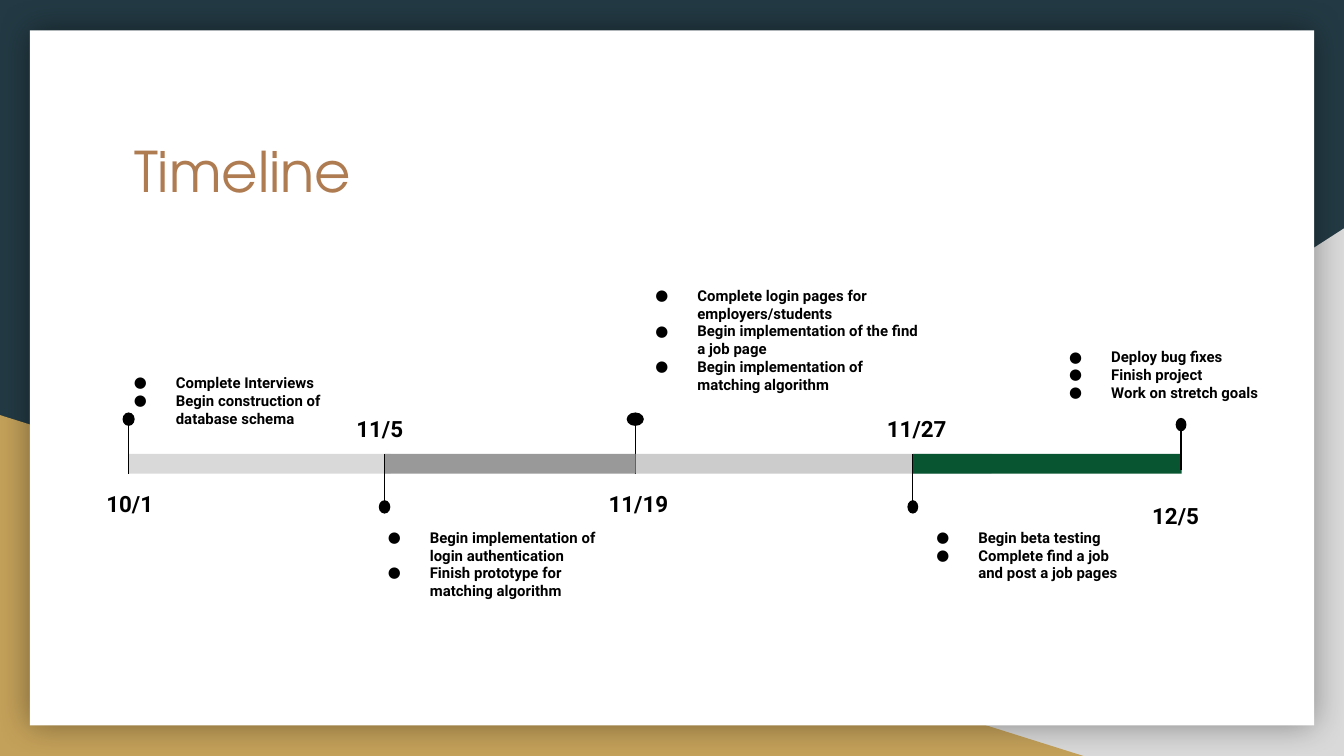
"""Build a project timeline slide with dated milestones and their tasks."""

from dataclasses import dataclass
from typing import NamedTuple, Optional

from lxml import etree
from pptx import Presentation
from pptx.dml.color import RGBColor
from pptx.enum.shapes import MSO_CONNECTOR, MSO_SHAPE
from pptx.enum.text import MSO_ANCHOR, PP_ALIGN
from pptx.oxml.ns import qn
from pptx.util import Pt

RECTANGLE = MSO_SHAPE.RECTANGLE
ELLIPSE = MSO_SHAPE.OVAL
RIGHT_TRIANGLE = MSO_SHAPE.RIGHT_TRIANGLE
STRAIGHT = MSO_CONNECTOR.STRAIGHT
TOP = MSO_ANCHOR.TOP
LEFT = PP_ALIGN.LEFT
CENTER = PP_ALIGN.CENTER


@dataclass(frozen=True)
class Theme:
    backdrop: str = "233A44"
    silver: str = "D9D9D9"
    gold: str = "C4A15A"
    panel: str = "FFFFFF"
    title: str = "AF7B51"
    ink: str = "000000"
    light_bar: str = "CCCCCC"
    dark_bar: str = "999999"
    green_bar: str = "085631"
    title_font: str = "TeX Gyre Adventor"
    body_font: str = "Roboto"
    title_size: float = 30
    date_size: float = 12
    task_size: float = 8
    inset: float = 7.2


THEME = Theme()
BAR_TOP, BAR_HEIGHT = 243.2, 10.6
BAR_BOTTOM = BAR_TOP + BAR_HEIGHT
DOT_HEIGHT = 7.2
DATE_HEIGHT = 29.5


class Box(NamedTuple):
    left: float
    top: float
    width: float
    height: float


class Bar(NamedTuple):
    left: float
    width: float
    color: str


@dataclass(frozen=True)
class Milestone:
    date: str
    x: float
    dot_center: float
    stem_end: float
    dot_width: float
    date_box: Box
    task_box: Box
    tasks: tuple[str, ...]
    bar: Optional[Bar] = None
    alignment: PP_ALIGN = CENTER
    date_inset: float = THEME.inset


MILESTONES = (
    Milestone(
        "11/19", 340.3, 224.6, BAR_BOTTOM, 9.2,
        Box(308.2, 253.4, 67.7, DATE_HEIGHT), Box(330.5, 146.2, 171.4, 74.9),
        ("Complete login pages for employers/students",
         "Begin implementation of the find a job page",
         "Begin implementation of matching algorithm"),
        Bar(339.8, 191.5, THEME.light_bar)),
    Milestone(
        "11/27", 489, 271.6, BAR_TOP, 5.8,
        Box(466.6, 213.1, 49, DATE_HEIGHT), Box(481, 275.8, 126, 74.2),
        ("Begin beta testing", "Complete find a job and post a job pages"),
        Bar(489, 144, THEME.green_bar)),
    Milestone(
        "10/1", 68.9, 224.6, BAR_BOTTOM, 6.5,
        Box(38.2, 253.4, 62.6, DATE_HEIGHT), Box(51.1, 193, 158.4, 28.1),
        ("Complete Interviews", "Begin construction of database schema"),
        Bar(68.9, 140.4, THEME.silver)),
    Milestone(
        "11/5", 206, 271.6, BAR_TOP, 6.2,
        Box(180.7, 213.1, 51.1, DATE_HEIGHT), Box(187.2, 275.8, 154.1, 74.2),
        ("Begin implementation of login authentication",
         "Finish prototype for matching algorithm"),
        Bar(206, 134.6, THEME.dark_bar), LEFT, 10.2),
    Milestone(
        "12/5", 632.7, 227.5, 252, 5.8,
        Box(607, 259.9, 51.1, DATE_HEIGHT), Box(552.2, 179.3, 150.5, 40.3),
        ("Deploy bug fixes", "Finish project", "Work on stretch goals"),
        alignment=LEFT, date_inset=10.2),
)


def points(box: Box) -> list[Pt]:
    return [Pt(length) for length in box]


def add_filled(slide, kind: MSO_SHAPE, box: Box, color: str):
    shape = slide.shapes.add_shape(kind, *points(box))
    shape.fill.solid()
    shape.fill.fore_color.rgb = RGBColor.from_string(color)
    shape.line.fill.background()
    shape.shadow.inherit = False
    return shape


def add_text(slide, box: Box, lines: tuple[str, ...], font: str, size: float,
             color: str, bold: bool = True, left_inset: float = THEME.inset):
    frame = slide.shapes.add_textbox(*points(box)).text_frame
    frame.word_wrap = True
    frame.vertical_anchor = TOP
    frame.margin_left = Pt(left_inset)
    frame.margin_top = frame.margin_right = frame.margin_bottom = Pt(THEME.inset)
    frame.text = "\n".join(lines)
    for paragraph in frame.paragraphs:
        for run in paragraph.runs:
            run.font.name = font
            run.font.size = Pt(size)
            run.font.bold = bold
            run.font.color.rgb = RGBColor.from_string(color)
    return frame


def add_bullet(paragraph) -> None:
    properties = paragraph._p.get_or_add_pPr()
    properties.set("marL", str(Pt(36)))
    properties.set("indent", str(Pt(-22.5)))
    bullet_color = etree.SubElement(properties, qn("a:buClr"))
    etree.SubElement(bullet_color, qn("a:srgbClr"), val=THEME.ink)
    etree.SubElement(properties, qn("a:buFont"), typeface=THEME.body_font)
    etree.SubElement(properties, qn("a:buChar"), char="●")


def add_glow_shadow(shape) -> None:
    effects = shape._element.spPr.find(qn("a:effectLst"))
    shadow = etree.SubElement(effects, qn("a:outerShdw"), blurRad=str(Pt(18)),
                              dist="0", dir="0", algn="ctr", rotWithShape="0")
    color = etree.SubElement(shadow, qn("a:srgbClr"), val=THEME.ink)
    etree.SubElement(color, qn("a:alpha"), val="40000")


def add_stem(slide, milestone: Milestone) -> None:
    stem = slide.shapes.add_connector(
        STRAIGHT, Pt(milestone.x), Pt(milestone.dot_center),
        Pt(milestone.x), Pt(milestone.stem_end))
    stem.line.width = Pt(0.75)
    stem.line.color.rgb = RGBColor.from_string(THEME.ink)
    etree.SubElement(stem._element.spPr, qn("a:effectLst"))


def add_milestone(slide, milestone: Milestone) -> None:
    if milestone.bar:
        bar = milestone.bar
        add_filled(slide, RECTANGLE,
                   Box(bar.left, BAR_TOP, bar.width, BAR_HEIGHT), bar.color)
    add_stem(slide, milestone)
    add_filled(slide, ELLIPSE,
               Box(milestone.x - milestone.dot_width / 2,
                   milestone.dot_center - DOT_HEIGHT / 2,
                   milestone.dot_width, DOT_HEIGHT), THEME.ink)
    date = add_text(slide, milestone.date_box, (milestone.date,), THEME.body_font,
                    THEME.date_size, THEME.ink, left_inset=milestone.date_inset)
    paragraph = date.paragraphs[0]
    paragraph.alignment = milestone.alignment
    paragraph.line_spacing = 1.15
    paragraph.space_after = Pt(16)
    tasks = add_text(slide, milestone.task_box, milestone.tasks, THEME.body_font,
                     THEME.task_size, THEME.ink)
    for paragraph in tasks.paragraphs:
        add_bullet(paragraph)


def add_backdrop(slide) -> None:
    slide.background.fill.solid()
    slide.background.fill.fore_color.rgb = RGBColor.from_string(THEME.backdrop)
    corner = add_filled(slide, RIGHT_TRIANGLE, Box(282, 122.4, 438, 282.6), THEME.silver)
    corner._element.spPr.xfrm.set("flipH", "1")
    add_filled(slide, RIGHT_TRIANGLE, Box(0, 222.4, 580.4, 182.6), THEME.gold)
    panel = add_filled(slide, RECTANGLE, Box(16, 16.3, 688, 372.4), THEME.panel)
    add_glow_shadow(panel)


def main() -> None:
    presentation = Presentation()
    presentation.slide_width, presentation.slide_height = Pt(720), Pt(405)
    slide = presentation.slides.add_slide(presentation.slide_layouts[6])
    add_backdrop(slide)
    add_text(slide, Box(64.8, 66.2, 591.1, 74.9), ("Timeline",),
             THEME.title_font, THEME.title_size, THEME.title, bold=False)
    for milestone in MILESTONES:
        add_milestone(slide, milestone)
    presentation.save("out.pptx")


if __name__ == "__main__":
    main()
